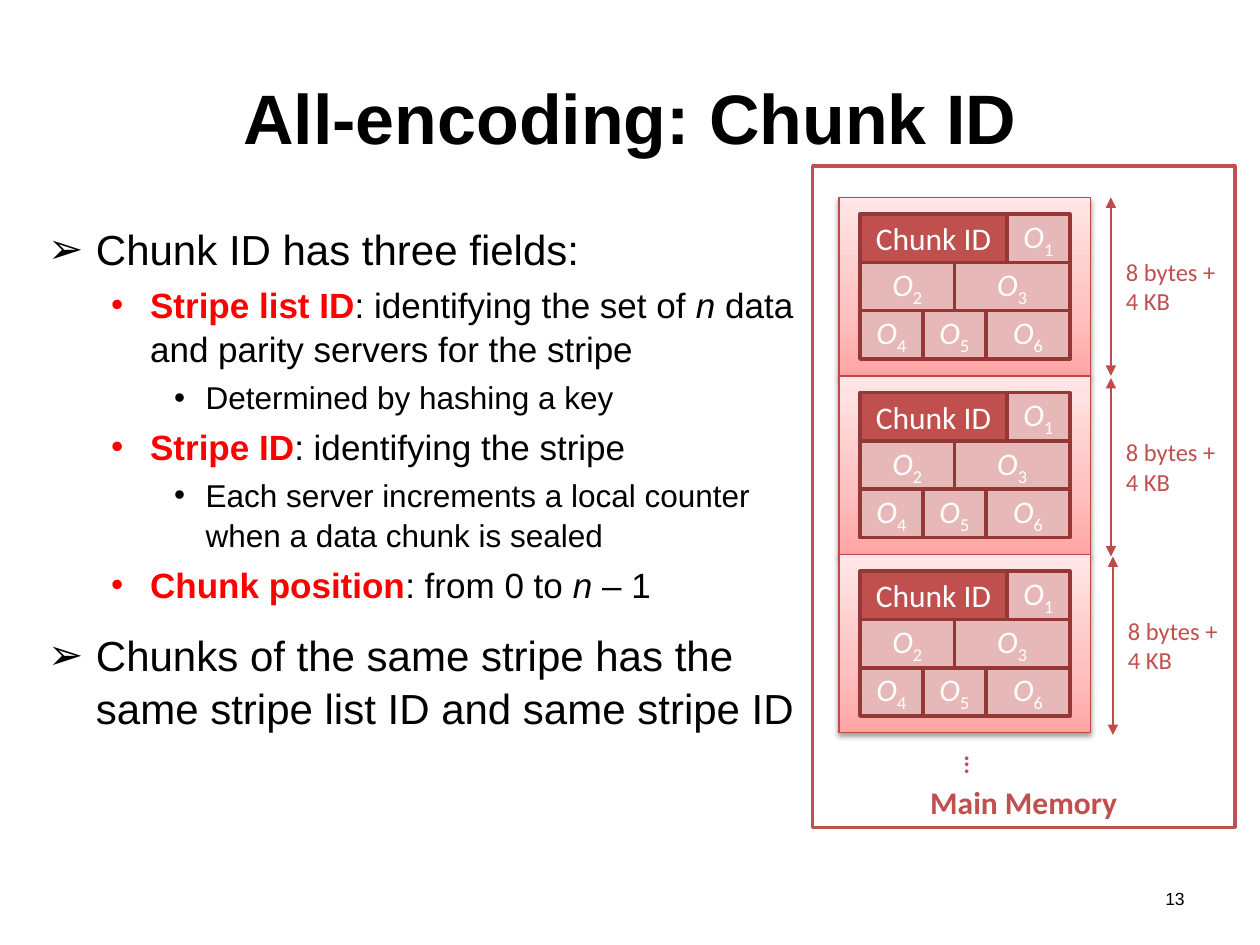
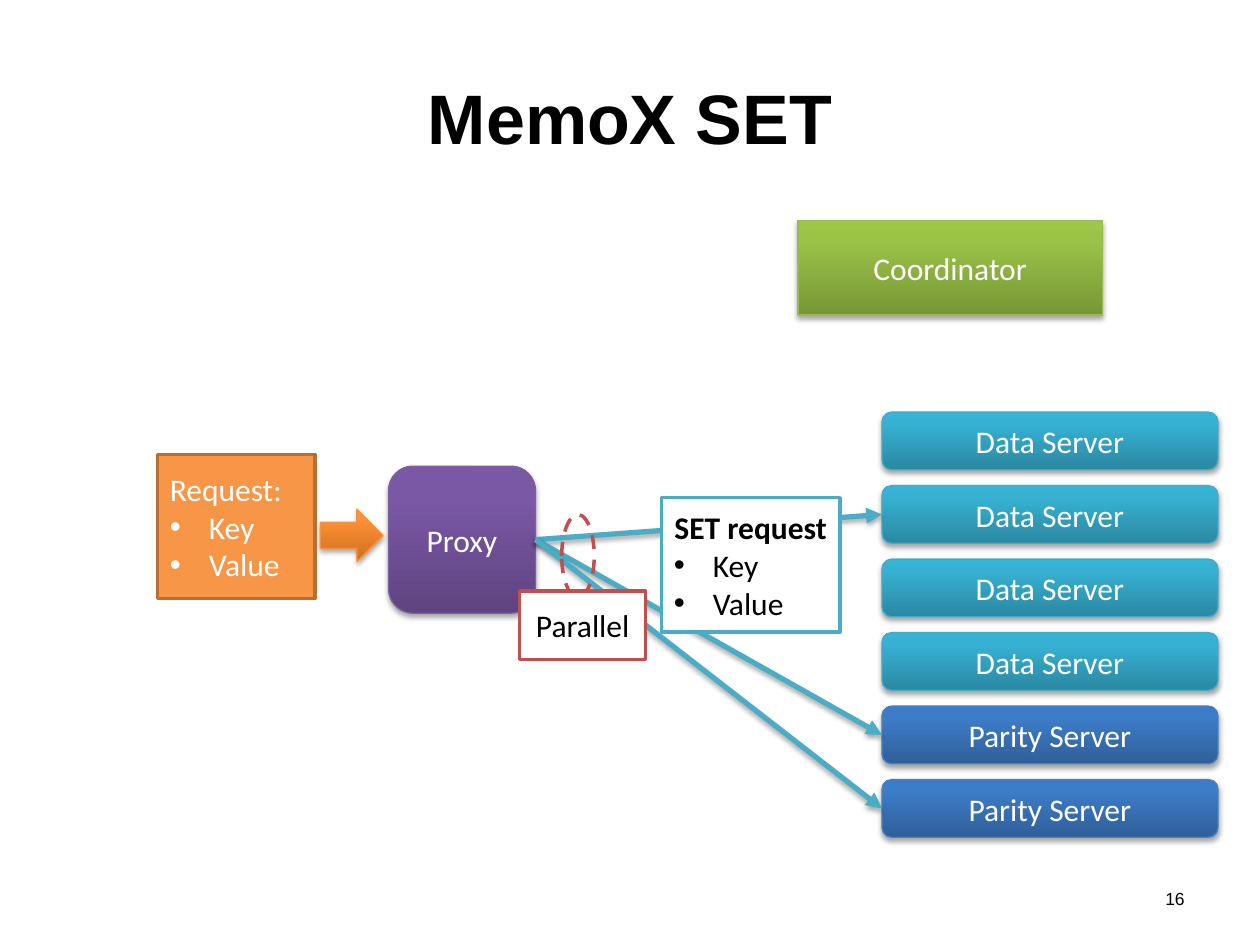
import copy

import pptx
import pptx.util
import pptx.dml.color
import pptx.enum.dml
import pptx.enum.shapes
import pptx.enum.text
import pptx.oxml.ns
from lxml import etree

RGB = pptx.dml.color.RGBColor
SHAPE = pptx.enum.shapes.MSO_SHAPE
ALIGN = pptx.enum.text.PP_ALIGN
ANCHOR = pptx.enum.text.MSO_ANCHOR
Pt = pptx.util.Pt
qn = pptx.oxml.ns.qn

# Colours
BLACK = RGB(0x00, 0x00, 0x00)
WHITE = RGB(0xFF, 0xFF, 0xFF)
RED = RGB(0xFF, 0x00, 0x00)
BRICK = RGB(0xC0, 0x50, 0x4D)
BRICK_LINE = RGB(0xBF, 0x4C, 0x48)
BRICK_EDGE = RGB(0x8E, 0x3B, 0x39)
ROSE = RGB(0xE6, 0xB9, 0xB8)
ROSE_EDGE = RGB(0x95, 0x37, 0x35)
AQUA = RGB(0x4B, 0xAC, 0xC6)
ORANGE = RGB(0xF7, 0x96, 0x46)
ORANGE_EDGE = RGB(0xB7, 0x6F, 0x34)

# Shadows: opacity in percent, distance in points
SOFT_SHADOW = (38, 1.6)
DEEP_SHADOW = (35, 1.8)


def glossy(stops, edge, shadow=DEEP_SHADOW, middle=0.8):
    """Look of a shaded shape: three colours from bottom to top, thin edge."""
    colors = [RGB.from_string(c) for c in stops.split()]
    return {"fill": list(zip((0, middle, 1), colors)),
            "line": RGB.from_string(edge), "width": 0.75, "shadow": shadow}


CHUNK_LOOK = glossy("FFA6A5 FFC0BF FFE7E7", "BF4C48", SOFT_SHADOW, 0.35)
PROXY_LOOK = glossy("5F4480 7B58A6 7C57A8", "7D60A0")
ARROW_LOOK = glossy("CC6E20 FF9034 FF9136", "F69240")
DATA_LOOK = glossy("2A88A2 37B1D2 34B4D6", "46AAC5")
PARITY_LOOK = glossy("2F5F99 3D7CC7 3A7CCB", "4B7EBC")
COORDINATOR_LOOK = glossy("779737 9BC348 9DC746", "98B955")

# Text formats
TITLE = {"name": "Arial", "size": Pt(40), "bold": True, "color": BLACK}
BODY = {"name": "Arial", "color": BLACK}
NUMBER = {"name": "Arial", "size": Pt(10), "color": BLACK}
LABEL = {"name": "Calibri", "size": Pt(18), "color": WHITE}
DARK_LABEL = {**LABEL, "color": BLACK}
NOTE = {"name": "Calibri", "size": Pt(14), "color": BRICK}
KEY = {"bold": True, "color": RED}
ITALIC = {"italic": True}

# Paragraph formats
CENTER = {"align": ALIGN.CENTER}
RIGHT = {"align": ALIGN.RIGHT}
ITEM = {"bullet": "•", "indent": (0.31, 0.31)}
LEVELS = [
    {"bullet": "➢", "indent": (0.38, 0.38), "size": 24, "before": 12},
    {"bullet": "•", "indent": (0.81, 0.31), "size": 20, "before": 4},
    {"bullet": "•", "indent": (1.25, 0.25), "size": 18, "before": 3.6},
]


class Deck:
    """Slides on a grid of 120 columns by 90 rows."""
    COLS, ROWS = 120, 90

    def __init__(self, width, height):
        self.prs = pptx.Presentation()
        self.prs.slide_width = pptx.util.Inches(width)
        self.prs.slide_height = pptx.util.Inches(height)
        self.s = None

    def x(self, col):
        return round(self.prs.slide_width * col / self.COLS)

    def y(self, row):
        return round(self.prs.slide_height * row / self.ROWS)

    def box(self, col, row, cols, rows):
        return self.x(col), self.y(row), self.x(cols), self.y(rows)

    def slide(self, title, number):
        self.s = self.prs.slides.add_slide(self.prs.slide_layouts[6])
        self.text((6, 3.6, 108, 15), [(title, CENTER)], TITLE)
        self.text((86, 84, 28, 4.2), [(number, RIGHT)], NUMBER, ANCHOR.TOP)

    def fill_text(self, sp, paras, fmt, anchor):
        tf = sp.text_frame
        tf.word_wrap = True
        tf.vertical_anchor = anchor
        for i, (runs, look) in enumerate(paras):
            p = tf.add_paragraph() if i else tf.paragraphs[0]
            p.alignment = look.get("align", ALIGN.LEFT)
            if "before" in look:
                p.line_spacing = 1.06
                p.space_before = Pt(look["before"] if i else 0)
            if "bullet" in look:
                self.bullet(p, look["bullet"], *look["indent"])
            size = {"size": Pt(look["size"])} if "size" in look else {}
            for text, extra in [(runs, {})] if isinstance(runs, str) else runs:
                r = p.add_run()
                r.text = text
                self.style(r, {**fmt, **size, **extra})

    def style(self, r, fmt):
        for name, value in fmt.items():
            if name == "color":
                r.font.color.rgb = value
            elif name == "baseline":
                r.font._element.set("baseline", str(value))
            else:
                setattr(r.font, name, value)

    def bullet(self, p, char, left, hang):
        pPr = p._p.get_or_add_pPr()
        pPr.set("marL", str(pptx.util.Inches(left)))
        pPr.set("indent", str(-pptx.util.Inches(hang)))
        etree.SubElement(pPr, qn("a:buFont")).set("typeface", "Arial")
        etree.SubElement(pPr, qn("a:buChar")).set("char", char)

    def text(self, at, paras, fmt, anchor=ANCHOR.MIDDLE):
        sp = self.s.shapes.add_textbox(*self.box(*at))
        self.fill_text(sp, paras, fmt, anchor)
        return sp

    def shape(self, kind, at, paras=(), fmt=LABEL, anchor=ANCHOR.MIDDLE,
              fill=None, line=None, width=2, dash=None, shadow=None):
        sp = self.s.shapes.add_shape(kind, *self.box(*at))
        if isinstance(fill, list):
            self.gradient(sp, fill)
        elif fill is None:
            sp.fill.background()
        else:
            sp.fill.solid()
            sp.fill.fore_color.rgb = fill
        sp.line.color.rgb = line
        sp.line.width = Pt(width)
        if dash:
            sp.line.dash_style = dash
        sp.shadow.inherit = False
        self.shade(sp._element.spPr.find(qn("a:effectLst")), shadow)
        self.fill_text(sp, paras, fmt, anchor)
        return sp

    def gradient(self, sp, stops):
        sp.fill.gradient()
        sp.fill.gradient_angle = 90
        gs = next(sp._element.spPr.iter(qn("a:gs")))
        gs.addnext(copy.deepcopy(gs))
        for stop, (position, color) in zip(sp.fill.gradient_stops, stops):
            stop.position = position
            stop.color.rgb = color

    def shade(self, effects, shadow):
        if not shadow:
            return
        alpha, dist = shadow
        outer = etree.SubElement(effects, qn("a:outerShdw"), {
            "blurRad": str(Pt(3.1)), "dist": str(Pt(dist)),
            "dir": "5400000", "rotWithShape": "0"})
        color = etree.SubElement(outer, qn("a:srgbClr"), val="000000")
        etree.SubElement(color, qn("a:alpha"), val=str(alpha * 1000))

    def arrow(self, start, end, color, width, ends=("tailEnd",), shadow=None):
        """Arrow between two grid points, or from right to left side of shapes."""
        glued = not isinstance(start, tuple)
        points = (0, 0, 0, 0) if glued else (
            self.x(start[0]), self.y(start[1]), self.x(end[0]), self.y(end[1]))
        c = self.s.shapes.add_connector(
            pptx.enum.shapes.MSO_CONNECTOR.STRAIGHT, *points)
        if glued:
            c.begin_connect(start, 3)
            c.end_connect(end, 1)
        c.line.color.rgb = color
        c.line.width = Pt(width)
        spPr = c._element.spPr
        for tag in ends:
            etree.SubElement(spPr.find(qn("a:ln")), qn("a:" + tag), type="triangle")
        self.shade(etree.SubElement(spPr, qn("a:effectLst")), shadow)


def chunk(d, col, row):
    """One memory chunk: its ID and six objects in three rows."""
    d.shape(SHAPE.RECTANGLE, (col, row, 24, 17), **CHUNK_LOOK)
    number = 0
    for i, widths in enumerate([(14, 6), (9, 11), (6, 6, 8)]):
        left = col + 2
        for j, width in enumerate(widths):
            at = (left, row + 1.6 + 4.6 * i, width, 4.6)
            left += width
            if i == j == 0:
                d.shape(SHAPE.RECTANGLE, at, [("Chunk ID", CENTER)],
                        fill=BRICK, line=BRICK_EDGE)
                continue
            number += 1
            runs = [("O", ITALIC), (str(number), {"baseline": -25000})]
            d.shape(SHAPE.RECTANGLE, at, [(runs, CENTER)],
                    fill=ROSE, line=ROSE_EDGE)


def chunk_id_slide(d):
    d.slide("All-encoding: Chunk ID", "13")
    top, sub, detail = LEVELS
    d.text((3.4, 20.4, 74.6, 61.6), [
        ("Chunk ID has three fields:", top),
        ([("Stripe list ID", KEY), (": identifying the set of ", {}), ("n", ITALIC),
          (" data and parity servers for the stripe", {})], sub),
        ("Determined by hashing a key", detail),
        ([("Stripe ID", KEY), (": identifying the stripe", {})], sub),
        ("Each server increments a local counter when a data chunk is sealed", detail),
        ([("Chunk position", KEY), (": from 0 to ", {}), ("n ", ITALIC),
          ("– 1", {})], sub),
        ("Chunks of the same stripe has the same stripe list ID and same stripe ID", top),
    ], BODY, ANCHOR.TOP)

    # Main memory with its stack of chunks
    d.shape(SHAPE.RECTANGLE, (77.4, 15.8, 40.2, 63), [("Main Memory", CENTER)],
            {**LABEL, "bold": True, "color": BRICK}, ANCHOR.BOTTOM,
            fill=WHITE, line=BRICK)
    for i in range(3):
        chunk(d, 79.9, 18.8 + 17 * i)
    dots = d.text((90.7, 70.8, 4.3, 4.1), [("...", RIGHT)], {**NOTE, "bold": True})
    dots.rotation = 90
    dots.text_frame.word_wrap = False

    # Size of each chunk
    for col, row in [(105.8, 18.8), (105.8, 36), (106, 53)]:
        d.arrow((col, row), (col, row + 17), BRICK_LINE, 0.75, ("headEnd", "tailEnd"))
        d.text((col + 0.25, row + 5.05, 11.8, 6.8), [("8 bytes + 4 KB", {})], NOTE)


def set_slide(d):
    d.slide("MemoX SET", "16")
    fields = [("Key", ITEM), ("Value", ITEM)]

    # Proxy and servers
    proxy = d.shape(SHAPE.ROUNDED_RECTANGLE, (37, 44.4, 14, 14),
                    [("Proxy", CENTER)], **PROXY_LOOK)
    d.shape(SHAPE.RIGHT_ARROW, (30.5, 48.5, 6, 5), **ARROW_LOOK)
    kinds = [("Data Server", DATA_LOOK)] * 4 + [("Parity Server", PARITY_LOOK)] * 2
    servers = [d.shape(SHAPE.ROUNDED_RECTANGLE, (84, 39.25 + 7 * i, 32, 5.5),
                       [(name, CENTER)], **look)
               for i, (name, look) in enumerate(kinds)]

    # Requests sent in parallel
    for i in (1, 4, 5):
        d.arrow(proxy, servers[i], AQUA, 3, shadow=DEEP_SHADOW)
    d.shape(SHAPE.RECTANGLE, (15, 43.3, 15, 13.7), [("Request:", {})] + fields,
            fill=ORANGE, line=ORANGE_EDGE)
    heading = ([("SET request", {"bold": True})], CENTER)
    d.shape(SHAPE.RECTANGLE, (63, 47.4, 17, 12.8), [heading] + fields, DARK_LABEL,
            fill=WHITE, line=AQUA)
    d.shape(SHAPE.OVAL, (53.5, 49, 3.1, 7.9), line=BRICK,
            dash=pptx.enum.dml.MSO_LINE.DASH)
    d.shape(SHAPE.RECTANGLE, (76, 21, 29, 9), [("Coordinator", CENTER)],
            **COORDINATOR_LOOK)
    d.shape(SHAPE.RECTANGLE, (49.5, 56.3, 12, 6.5), [("Parallel", CENTER)],
            DARK_LABEL, fill=WHITE, line=BRICK)


def main():
    d = Deck(10, 7.5)
    chunk_id_slide(d)
    set_slide(d)
    d.prs.save("out.pptx")


if __name__ == "__main__":
    main()
